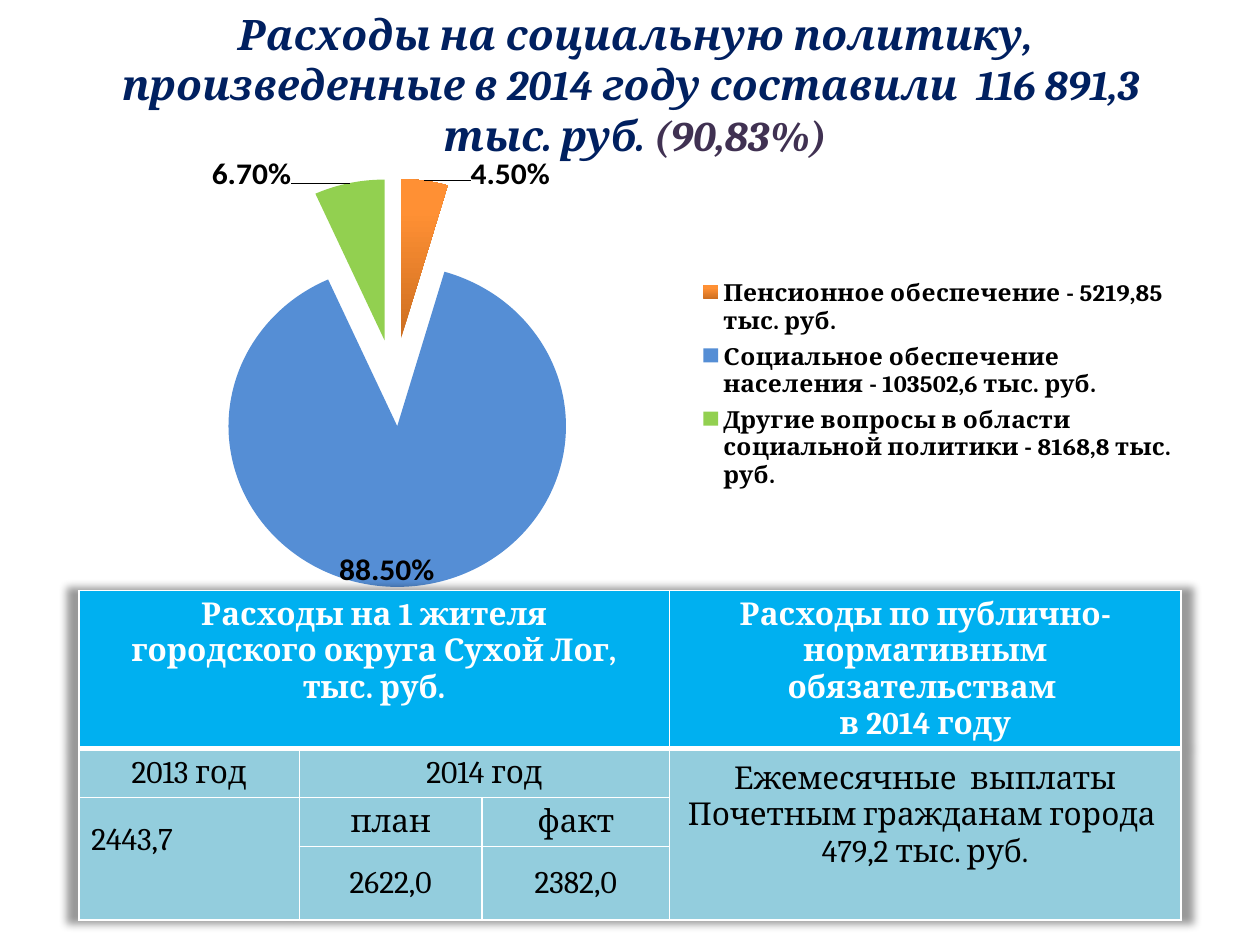
import pptx
import pptx.chart.data
import pptx.dml.color
import pptx.enum.chart
import pptx.enum.text
import pptx.oxml
import pptx.util
from dataclasses import dataclass
from pptx.oxml.ns import nsdecls, qn

Pt = pptx.util.Pt
ALIGN = pptx.enum.text.PP_ALIGN
ANCHOR = pptx.enum.text.MSO_ANCHOR
CHART = pptx.enum.chart

SERIF = "Cambria"
HEAD = dict(name=SERIF, size=Pt(18), bold=True)
BODY = dict(name=SERIF, size=Pt(18), bold=False)
TITLE = dict(name=SERIF, size=Pt(24), bold=True, italic=True)
LABEL = dict(name="Calibri", size=Pt(18), bold=True)


@dataclass
class Cell:
    row: int
    col: int
    lines: tuple
    rows: int = 1
    cols: int = 1
    head: bool = False
    align: ALIGN = ALIGN.CENTER
    foot: float = 3.6


@dataclass
class Slice:
    name: str
    share: float
    fill: str
    shift: dict


SLICES = [
    Slice("Пенсионное обеспечение - 5219,85 тыс. руб.", 0.045, "FF9034",
          dict(x=0.04, y=0.03)),
    Slice("Социальное обеспечение населения - 103502,6 тыс. руб.", 0.885, "558ED5",
          dict(x=-0.02, y=-0.09)),
    Slice("Другие вопросы в области социальной политики - 8168,8 тыс. руб.",
          0.067, "92D050", dict(x=-0.05, y=0.03)),
]
CELLS = [
    Cell(0, 0, ("Расходы на 1 жителя", " городского округа Сухой Лог, ", "тыс. руб."),
         cols=3, head=True),
    Cell(0, 3, ("Расходы по публично-нормативным обязательствам ", "в 2014 году"),
         head=True),
    Cell(1, 0, ("2013 год",)),
    Cell(1, 1, ("2014 год",), cols=2),
    Cell(1, 3, ("Ежемесячные  выплаты Почетным гражданам города  479,2 тыс. руб.",),
         rows=3, foot=25),
    Cell(2, 0, ("2443,7",), rows=2, align=ALIGN.LEFT, foot=25),
    Cell(2, 1, ("план",)),
    Cell(2, 2, ("факт",)),
    Cell(3, 1, ("2622,0",)),
    Cell(3, 2, ("2382,0",)),
]


def paint(item, tone: str) -> None:
    """Give a fill or a font a solid colour."""
    if hasattr(item, "solid"):
        item.solid()
        item.fore_color.rgb = pptx.dml.color.RGBColor.from_string(tone)
    else:
        item.color.rgb = pptx.dml.color.RGBColor.from_string(tone)


def style(font, look: dict, tone: str) -> None:
    for key, value in look.items():
        setattr(font, key, value)
    paint(font, tone)


def xml(text: str):
    return pptx.oxml.parse_xml(text)


def layout(sizes: dict, lead: str = ""):
    """Make a manual chart layout from fractions of the chart."""
    parts = "".join(f'<c:{key} val="{value}"/>' for key, value in sizes.items())
    return xml(f'<c:layout {nsdecls("c")}><c:manualLayout>{lead}{parts}'
               '</c:manualLayout></c:layout>')


def add_title(slide) -> None:
    box = slide.shapes.title
    place = dict(left=Pt(39.6), top=Pt(22.7), width=Pt(646.6), height=Pt(50.4))
    for key, value in place.items():
        setattr(box, key, value)
    frame = box.text_frame
    frame.word_wrap = True
    frame.auto_size = pptx.enum.text.MSO_AUTO_SIZE.NONE
    frame.vertical_anchor = ANCHOR.MIDDLE
    para = frame.paragraphs[0]
    para.alignment = ALIGN.CENTER
    runs = [("Расходы на социальную политику, произведенные в 2014 году "
             "составили  116 891,3  тыс. руб. ", "002060"),
            ("(90,83%)", "403152")]
    for text, tone in runs:
        run = para.add_run()
        run.text = text
        style(run.font, TITLE, tone)


def add_pie(slide) -> None:
    data = pptx.chart.data.CategoryChartData(number_format="0.00%")
    data.categories = [s.name for s in SLICES]
    data.add_series("Series 1", [s.share for s in SLICES])
    chart = slide.shapes.add_chart(CHART.XL_CHART_TYPE.PIE, Pt(28), Pt(78.5),
                                   Pt(646.6), Pt(281.5), data).chart
    chart.has_title = False
    style(chart.font, dict(name="Calibri", size=Pt(18)), "000000")
    chart.has_legend = True
    legend = chart.legend
    legend.position = CHART.XL_LEGEND_POSITION.RIGHT
    legend.include_in_layout = False
    style(legend.font, dict(name=SERIF, size=Pt(14), bold=True), "000000")
    edges = '<c:xMode val="edge"/><c:yMode val="edge"/>'
    for old in legend._element.findall(qn("c:layout")):
        legend._element.remove(old)
    legend._element.find(qn("c:legendPos")).addnext(
        layout(dict(x=0.57, y=0.25, w=0.43, h=0.48), edges))

    plot = chart.plots[0]
    plot.vary_by_categories = True
    series = plot.series[0]
    for i, part in enumerate(SLICES):
        paint(series.points[i].format.fill, part.fill)
    fill = series.points[0].format.fill
    fill.gradient()
    fill.gradient_angle = 90
    for stop, (spot, tone) in zip(fill.gradient_stops, [(0, "CC6E20"), (0.8, "FF9034")]):
        stop.position = spot
        stop.color.rgb = pptx.dml.color.RGBColor.from_string(tone)
    points = series._element.findall(qn("c:dPt"))
    for mark in [points[0]] + [point.find(qn("c:spPr")) for point in points]:
        mark.addprevious(xml(f'<c:explosion {nsdecls("c")} val="27"/>'))

    labels = series.data_labels
    values = dict(show_value=True, show_percentage=False, number_format="0.00%",
                  number_format_is_linked=False,
                  position=CHART.XL_LABEL_POSITION.BEST_FIT)
    for key, value in values.items():
        setattr(labels, key, value)
    style(labels.font, LABEL, "000000")
    for i, part in enumerate(SLICES):
        label = series.points[i].data_label
        style(label.font, LABEL, "000000")
        label.position = CHART.XL_LABEL_POSITION.BEST_FIT
    for item, part in zip(labels._element.findall(qn("c:dLbl")), SLICES):
        item.find(qn("c:idx")).addnext(layout(part.shift))
    lead = labels._element.find(qn("c:showLeaderLines"))
    if lead is None:
        labels._element.append(xml(f'<c:showLeaderLines {nsdecls("c")} val="1"/>'))
    else:
        lead.set("val", "1")

    area = chart._chartSpace.chart.plotArea
    for old in area.findall(qn("c:layout")):
        area.remove(old)
    area.insert(0, layout(dict(x=0, y=0.05, w=0.61, h=0.87),
                          '<c:layoutTarget val="inner"/>' + edges))


def edge(cell, head: bool) -> None:
    """Draw white cell borders, heavier under a heading."""
    props = cell._tc.get_or_add_tcPr()
    for i, side in enumerate("LRTB"):
        width = Pt(3 if head and side == "B" else 1)
        props.insert(i, xml(
            f'<a:ln{side} {nsdecls("a")} w="{width}"><a:solidFill>'
            f'<a:srgbClr val="FFFFFF"/></a:solidFill></a:ln{side}>'))


def add_grid(slide) -> None:
    table = slide.shapes.add_table(4, 4, Pt(45), Pt(337.5), Pt(630), Pt(162)).table
    for col, width in zip(table.columns, (126, 104.5, 107, 292.5)):
        col.width = Pt(width)
    for row, height in zip(table.rows, (70, 25, 25, 42)):
        row.height = Pt(height)
    table._tbl.tblPr.insert(0, xml(
        f'<a:effectLst {nsdecls("a")}><a:outerShdw blurRad="{Pt(5)}" sx="102000" '
        'sy="102000" algn="ctr" rotWithShape="0"><a:srgbClr val="000000">'
        '<a:alpha val="40000"/></a:srgbClr></a:outerShdw></a:effectLst>'))
    for i in range(4):
        for j in range(4):
            cell = table.cell(i, j)
            paint(cell.fill, "93CDDD" if i else "00B0F0")
            edge(cell, i == 0)
    for item in CELLS:
        cell = table.cell(item.row, item.col)
        if item.rows * item.cols > 1:
            cell.merge(table.cell(item.row + item.rows - 1, item.col + item.cols - 1))
        cell.vertical_anchor = ANCHOR.TOP if item.head else ANCHOR.MIDDLE
        cell.margin_bottom = Pt(item.foot)
        cell.text = "\n".join(item.lines)
        for para in cell.text_frame.paragraphs:
            para.alignment = item.align
            for run in para.runs:
                style(run.font, HEAD if item.head else BODY,
                      "FFFFFF" if item.head else "000000")


def main() -> None:
    deck = pptx.Presentation()
    deck.slide_width, deck.slide_height = Pt(720), Pt(540)
    slide = deck.slides.add_slide(deck.slide_layouts[5])
    add_title(slide)
    add_pie(slide)
    add_grid(slide)
    deck.save("out.pptx")


if __name__ == "__main__":
    main()
